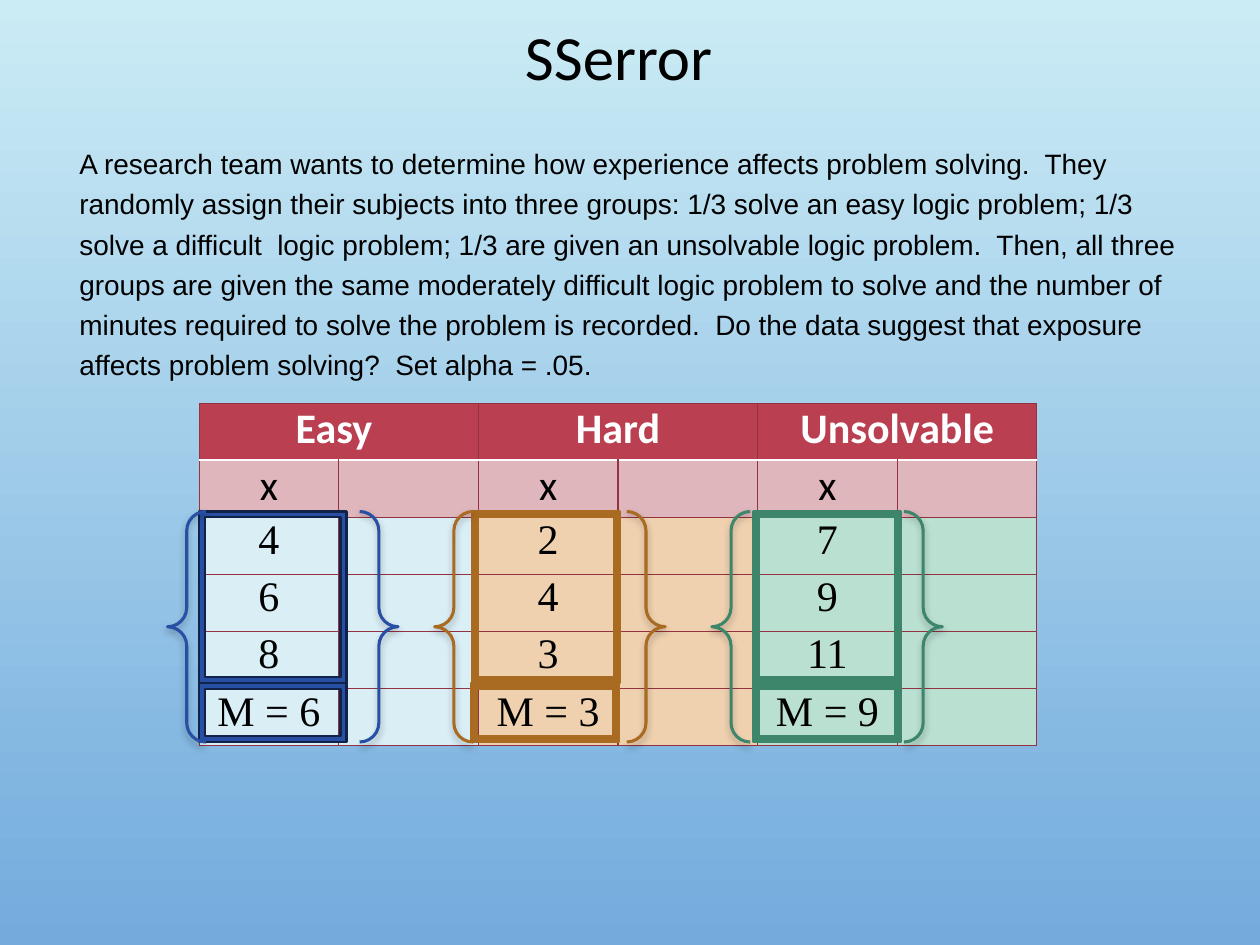
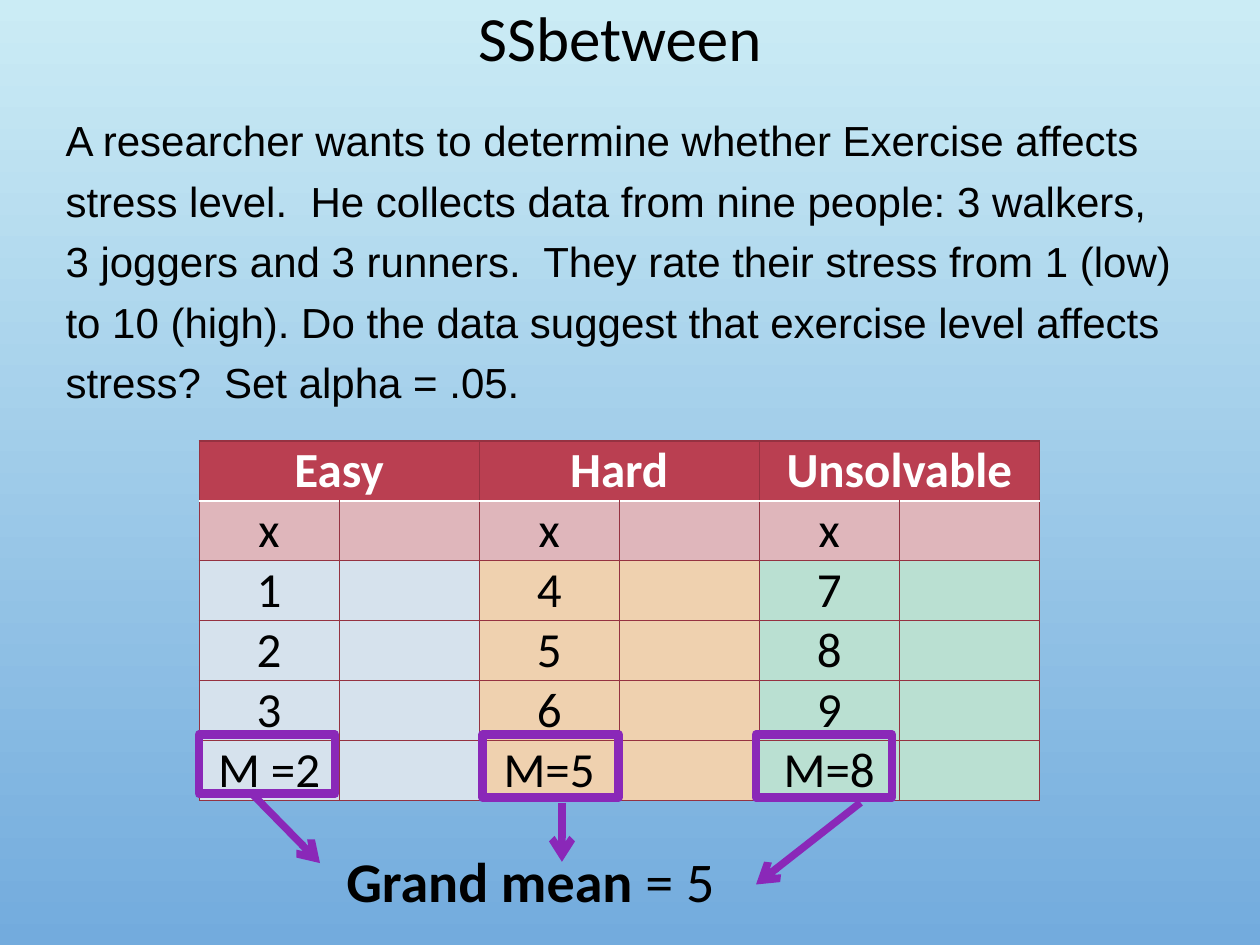
"""Build two slides on the sums of squares in a one-way analysis of variance."""
import pptx
import pptx.dml.color
import pptx.enum.shapes
import pptx.enum.text
import pptx.oxml.ns
import pptx.util
from lxml import etree
from pptx.util import Inches

SHAPES = pptx.enum.shapes.MSO_SHAPE
CENTER = pptx.enum.text.PP_ALIGN.CENTER
SKY = ["CBECF5", "73ABDD"]
BLACK, WHITE = "000000", "FFFFFF"
GRID, HEADER, SUBHEADER = "953241", "BA3F51", "DFB6BB"
BLUE, NAVY, BROWN, GREEN, PURPLE = "274FA4", "112348", "A96A22", "3D866C", "8A28B8"

ERROR = {
    "title": ("SSerror", (0.66, 0.06, 8.5, 0.83)),
    "body": (
        "A research team wants to determine how experience affects problem solving.  "
        "They randomly assign their subjects into three groups: 1/3 solve an easy logic "
        "problem; 1/3 solve a difficult  logic problem; 1/3 are given an unsolvable logic "
        "problem.  Then, all three groups are given the same moderately difficult logic "
        "problem to solve and the number of minutes required to solve the problem is "
        "recorded.  Do the data suggest that exposure affects problem solving?  "
        "Set alpha = .05.",
        16, (0.53, 1.06, 9, 1.92)),
    "table": {
        "place": (1.58, 3.2, 6.65, 2.72), "size": 24, "value_font": "Times New Roman",
        "groups": [("Easy ", "DAEEF6", ["4", "6", "8", "M = 6"]),
                   ("Hard", "EFD1AF", ["2", "4", "3", "M = 3"]),
                   ("Unsolvable", "BAE0D2", ["7", "9", "11", "M = 9"])]},
}
BETWEEN = {
    "title": ("SSbetween", (0.67, -0.01, 8.5, 0.68)),
    "body": (
        "A researcher wants to determine whether Exercise affects stress level.  "
        "He collects data from nine people: 3 walkers, 3 joggers and 3 runners.  "
        "They rate their stress from 1 (low) to 10 (high). Do the data suggest that "
        "exercise level affects stress?  Set alpha = .05.",
        24, (0.42, 0.78, 9, 1.92)),
    "table": {
        "place": (1.58, 3.5, 6.67, 2.72), "size": 28, "value_font": "Calibri",
        "groups": [("Easy", "D6E2ED", ["1", "2", "3", "M =2"]),
                   ("Hard", "EFD1AF", ["4", "5", "6", "M=5"]),
                   ("Unsolvable", "BAE0D2", ["7", "8", "9", "M=8"])]},
}
# (colour, outline, left of mean frame, left of scores frame, left of braces)
GROUP_MARKS = [(BLUE, NAVY, 1.58, 1.58, 1.33),
               (BROWN, BROWN, 3.74, 3.75, 3.45),
               (GREEN, GREEN, 5.98, 5.98, 5.65)]
MEAN_BOXES = [(1.58, 5.83, 1.08, 0.47), (3.83, 5.83, 1.08, 0.5), (6, 5.83, 1.08, 0.5)]
MEAN_ARROWS = [(2, 6.3, 2.54, 6.85), (4.46, 6.37, 4.46, 6.84), (6.83, 6.37, 6, 7.02)]
GRAND_MEAN = [("Grand mean ", True), ("= 5", False)]


def color(value):
    return pptx.dml.color.RGBColor.from_string(value)


def inches(place):
    return [Inches(length) for length in place]


def add_xml(parent, tag, **attributes):
    return etree.SubElement(parent, pptx.oxml.ns.qn(tag), attributes)


def add_run(paragraph, text, size, font="Calibri", hue=BLACK, bold=False):
    run = paragraph.add_run()
    run.text = text
    run.font.size = pptx.util.Pt(size)
    run.font.name = font
    run.font.bold = bold
    run.font.color.rgb = color(hue)


def set_line(shape, hue, width):
    shape.line.color.rgb = color(hue)
    shape.line.width = pptx.util.Pt(width)


def fill_placeholder(shape, place, text, size, font, spacing):
    shape.left, shape.top, shape.width, shape.height = inches(place)
    frame = shape.text_frame
    frame.word_wrap = True
    frame.auto_size = pptx.enum.text.MSO_AUTO_SIZE.NONE
    paragraph = frame.paragraphs[0]
    paragraph.line_spacing = spacing
    paragraph.space_before = pptx.util.Pt(0)
    add_run(paragraph, text, size, font)
    return paragraph


def add_topic_slide(presentation, topic):
    slide = presentation.slides.add_slide(presentation.slide_layouts[1])
    title, place = topic["title"]
    heading = fill_placeholder(slide.shapes.title, place, title, 36, "Calibri", 0.9)
    heading.alignment = CENTER
    slide.shapes.title.text_frame.vertical_anchor = pptx.enum.text.MSO_ANCHOR.MIDDLE
    text, size, place = topic["body"]
    paragraph = fill_placeholder(slide.placeholders[1], place, text, size, "Arial", 1.2)
    properties = paragraph._p.get_or_add_pPr()
    properties.set("marL", "0")
    properties.set("indent", "0")
    add_xml(properties, "a:buNone")
    add_score_table(slide, **topic["table"])
    return slide


def format_cell(cell, row, fill):
    cell.margin_left = cell.margin_right = Inches(0.07)
    cell.margin_top = cell.margin_bottom = 0
    properties = cell._tc.get_or_add_tcPr()
    for side in "LRTB":
        divider = (row, side) in [(0, "B"), (1, "T")]
        width = pptx.util.Pt(1.25 if divider else 0.75)
        border = add_xml(properties, f"a:ln{side}", w=str(width))
        add_xml(add_xml(border, "a:solidFill"), "a:srgbClr", val=WHITE if divider else GRID)
    cell.fill.solid()
    cell.fill.fore_color.rgb = color(fill)


def add_score_table(slide, place, size, value_font, groups):
    row_count = 2 + len(groups[0][2])
    table = slide.shapes.add_table(row_count, 2 * len(groups), *inches(place)).table
    for index, (name, tint, values) in enumerate(groups):
        fills = [HEADER, SUBHEADER] + [tint] * len(values)
        for row, (text, fill) in enumerate(zip([name, "x"] + values, fills)):
            cell, neighbour = (table.cell(row, 2 * index + step) for step in (0, 1))
            format_cell(cell, row, fill)
            format_cell(neighbour, row, fill)
            if row == 0:
                cell.merge(neighbour)
            paragraph = cell.text_frame.paragraphs[0]
            paragraph.alignment = CENTER
            add_run(paragraph, text, size, value_font if row > 1 else "Calibri",
                    BLACK if row else WHITE, row == 0)


def add_outline(slide, kind, place, hue, width, fill=None):
    shape = slide.shapes.add_shape(kind, *inches(place))
    shape.shadow.inherit = False
    if fill:
        shape.fill.solid()
        shape.fill.fore_color.rgb = color(fill)
    else:
        shape.fill.background()
    set_line(shape, hue, width)
    return shape


def add_braces(slide, left, hue):
    braces = add_outline(slide, SHAPES.DOUBLE_BRACE, (left, 4.06, 1.83, 1.83), hue, 1.75)
    effects = braces._element.spPr.find(pptx.oxml.ns.qn("a:effectLst"))
    shadow = add_xml(effects, "a:outerShdw", blurRad=str(pptx.util.Pt(4)),
                     dist=str(pptx.util.Pt(2)), dir="5400000", rotWithShape="0")
    add_xml(add_xml(shadow, "a:srgbClr", val=BLACK), "a:alpha", val="28000")


def add_arrow(slide, ends):
    straight = pptx.enum.shapes.MSO_CONNECTOR.STRAIGHT
    arrow = slide.shapes.add_connector(straight, *inches(ends))
    set_line(arrow, PURPLE, 4.25)
    properties = arrow._element.spPr
    add_xml(properties.find(pptx.oxml.ns.qn("a:ln")), "a:tailEnd", type="arrow")
    add_xml(properties, "a:effectLst")


def mark_error(slide):
    for hue, outline, mean_left, scores_left, _ in GROUP_MARKS:
        for place, thickness in [((mean_left, 5.42, 1.17, 0.47), 0.1),
                                 ((scores_left, 4.06, 1.17, 1.36), 0.04)]:
            frame = add_outline(slide, SHAPES.FRAME, place, outline, 1.25, hue)
            frame.adjustments[0] = thickness
    for hue, _, _, _, braces_left in GROUP_MARKS:
        add_braces(slide, braces_left, hue)


def mark_between(slide):
    box = slide.shapes.add_textbox(*inches((2.65, 6.67, 4, 1)))
    box.text_frame.word_wrap = True
    for text, bold in GRAND_MEAN:
        add_run(box.text_frame.paragraphs[0], text, 32, bold=bold)
    for place, ends in zip(MEAN_BOXES, MEAN_ARROWS):
        add_outline(slide, SHAPES.RECTANGLE, place, PURPLE, 5)
        add_arrow(slide, ends)


def main():
    presentation = pptx.Presentation()
    presentation.slide_width, presentation.slide_height = inches((10, 7.5))
    background = presentation.slide_master.background.fill
    background.gradient()
    background.gradient_angle = 270
    for stop, hue in zip(background.gradient_stops, SKY):
        stop.color.rgb = color(hue)
    mark_error(add_topic_slide(presentation, ERROR))
    mark_between(add_topic_slide(presentation, BETWEEN))
    presentation.save("out.pptx")


if __name__ == "__main__":
    main()
